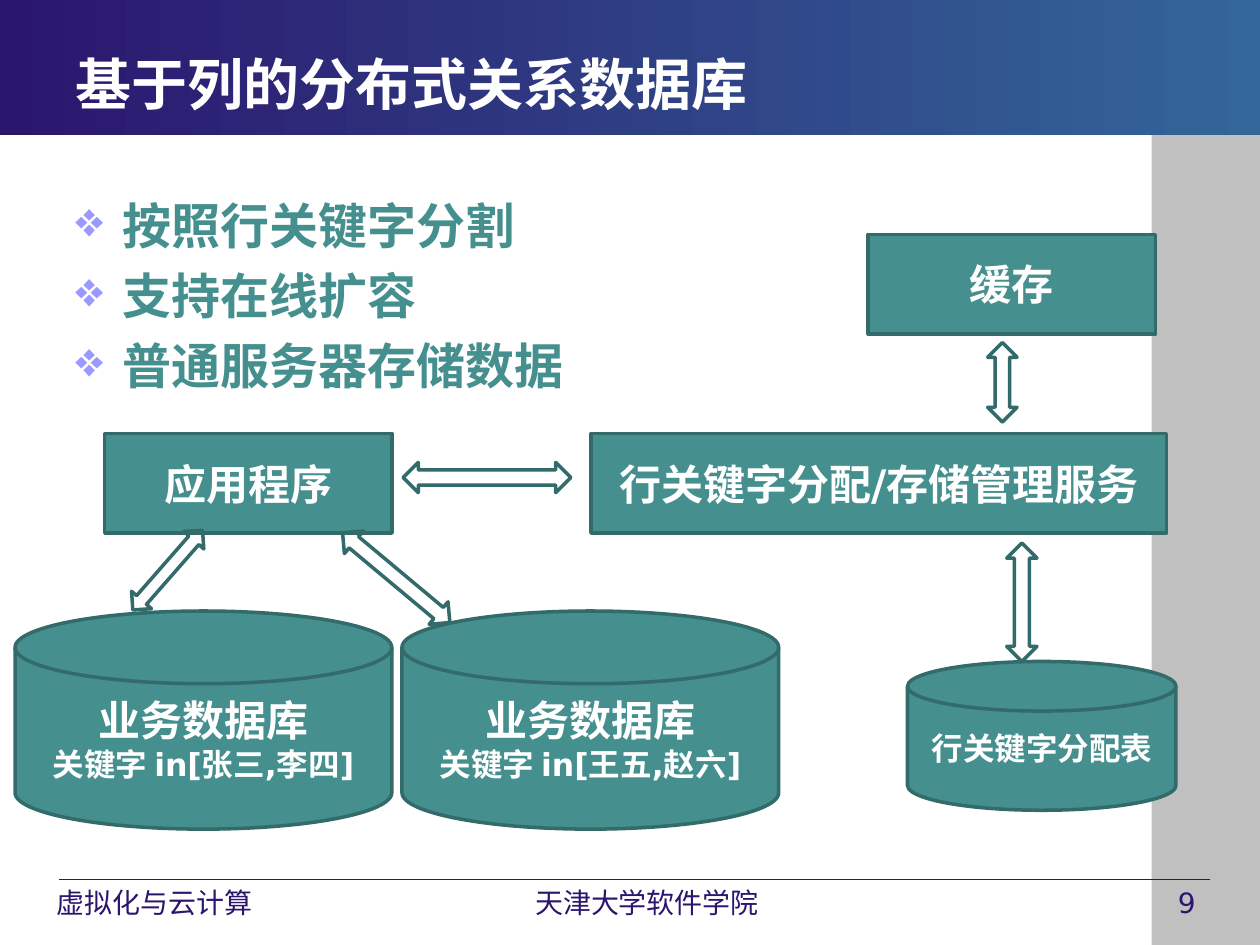
from lxml import etree
from pptx import Presentation
from pptx.dml.color import RGBColor
from pptx.enum.shapes import MSO_CONNECTOR, MSO_SHAPE
from pptx.enum.text import MSO_ANCHOR, PP_ALIGN
from pptx.oxml.ns import qn
from pptx.util import Pt

RECT, DISK, ARROW = (MSO_SHAPE.RECTANGLE, MSO_SHAPE.FLOWCHART_MAGNETIC_DISK,
                     MSO_SHAPE.LEFT_RIGHT_ARROW)
LINE = MSO_CONNECTOR.STRAIGHT
LEFT, MID = PP_ALIGN.LEFT, PP_ALIGN.CENTER
TOP, CENTER = MSO_ANCHOR.TOP, MSO_ANCHOR.MIDDLE
FONT = "DejaVu Sans"
HEX = {"navy": "2B166E", "blue": "336699", "teal": "458F8F", "edge": "336A6A",
       "lilac": "9999FF", "gray": "C0C0C0", "white": "FFFFFF"}

# Content: text lines are (words, size)
TITLE = "基于列的分布式关系数据库"
POINTS = ["按照行关键字分割", "支持在线扩容", "普通服务器存储数据"]
FOOT = [  # left, width, align, words
    (666, 51, LEFT, "9"),
    (20.2, 139.7, MID, "虚拟化与云计算 "),
    (288.7, 162, MID, "天津大学软件学院"),
]
BOX_W, BOX_H, ROW = 164.2, 56.9, 247.7
DISK_W, DISK_H, BASE = 215.3, 124.6, 349.2
NODES = [  # kind, left, top, width, height, lines
    (DISK, 8.6, BASE, DISK_W, DISK_H,
     [("业务数据库", 24), ("关键字 in[张三,李四]", 18)]),
    (RECT, 59.8, ROW, BOX_W, BOX_H, [("应用程序", 24)]),
    (DISK, 229.7, BASE, DISK_W, DISK_H,
     [("业务数据库", 24), ("关键字 in[王五,赵六]", 18)]),
    (DISK, 518.6, 378, 153.4, 85, [("行关键字分配表", 18)]),
    (RECT, 337.7, ROW, 329, BOX_H, [("行关键字分配/存储管理服务", 24)]),
    (RECT, 496.1, 133.9, BOX_W, BOX_H, [("缓存", 24)]),
]
ARROWS = [  # centre x, centre y, length, thickness, turn
    (278.3, 272.9, 95.8, 17.3, 0),
    (572.8, 218.5, 45.4, 16.8, 90),
    (583.9, 344.2, 67.7, 17.3, 90),
    (226.4, 330.1, 79.9, 16.8, 39.9),
    (95.8, 325.8, 60.5, 15.1, 131.2),
]


def rgb(name):
    return RGBColor.from_string(HEX[name])


def shape(kind, x, y, w, h, fill=None, edge=None):
    item = slide.shapes.add_shape(kind, Pt(x), Pt(y), Pt(w), Pt(h))
    item.shadow.inherit = False
    if fill:
        item.fill.solid()
        item.fill.fore_color.rgb = rgb(fill)
    else:
        item.fill.background()
    if edge:
        item.line.color.rgb = rgb(edge)
        item.line.width = Pt(2)
    else:
        item.line.fill.background()
    return item


def write(item, lines, color, bold=True, align=LEFT, anchor=TOP):
    frame = item.text_frame
    frame.word_wrap = True
    frame.vertical_anchor = anchor
    for i, (words, size) in enumerate(lines):
        para = frame.add_paragraph() if i else frame.paragraphs[0]
        para.alignment = align
        run = para.add_run()
        run.text = words
        style = {"name": FONT, "size": Pt(size), "bold": bold}
        for key, value in style.items():
            setattr(run.font, key, value)
        run.font.color.rgb = rgb(color)
    return frame


def label(x, y, w, h, *args, **style):
    box = slide.shapes.add_textbox(Pt(x), Pt(y), Pt(w), Pt(h))
    return write(box, *args, **style)


def bullet(para):
    props = para._p.get_or_add_pPr()
    props.set("marL", str(Pt(27)))
    props.set("indent", str(-Pt(27)))
    para.space_before = Pt(6.5)
    tint = etree.SubElement(props, qn("a:buClr"))
    etree.SubElement(tint, qn("a:srgbClr"), val=HEX["lilac"])
    etree.SubElement(props, qn("a:buChar"), char="❖")


deck = Presentation()
deck.slide_width, deck.slide_height = Pt(720), Pt(540)
slide = deck.slides.add_slide(deck.slide_layouts[6])

# Side band, footer rule and title band
shape(RECT, 658.1, 77, 61.9, 463, "gray")
rule = slide.shapes.add_connector(LINE, Pt(33.8), Pt(502.6), Pt(691.2), Pt(502.6))
rule.line.color.rgb = rgb("navy")
rule.line.width = Pt(0.75)
etree.SubElement(rule._element.spPr, qn("a:effectLst"))
band = shape(RECT, 0, 0, 720, 77, "navy")
band.fill.gradient()
band.fill.gradient_angle = 0
for stop, name in zip(band.fill.gradient_stops, ("navy", "blue")):
    stop.color.rgb = rgb(name)

# Footer, title and bullets
for x, w, align, words in FOOT:
    label(x, 502.6, w, 25.2, [(words, 16)], "navy", bold=False, align=align)
label(36, 25.2, 486, 44.6, [(TITLE, 32)], "white", anchor=CENTER)
body = label(36, 108, 648, 139.7, [(words, 28) for words in POINTS], "teal")
for para in body.paragraphs:
    bullet(para)

# Diagram
for kind, x, y, w, h, lines in NODES:
    node = shape(kind, x, y, w, h, "teal", "edge")
    write(node, lines, "white", align=MID, anchor=CENTER)
for x, y, w, h, turn in ARROWS:
    arrow = shape(ARROW, x - w / 2, y - h / 2, w, h, edge="edge")
    arrow.rotation = turn

deck.save("out.pptx")
